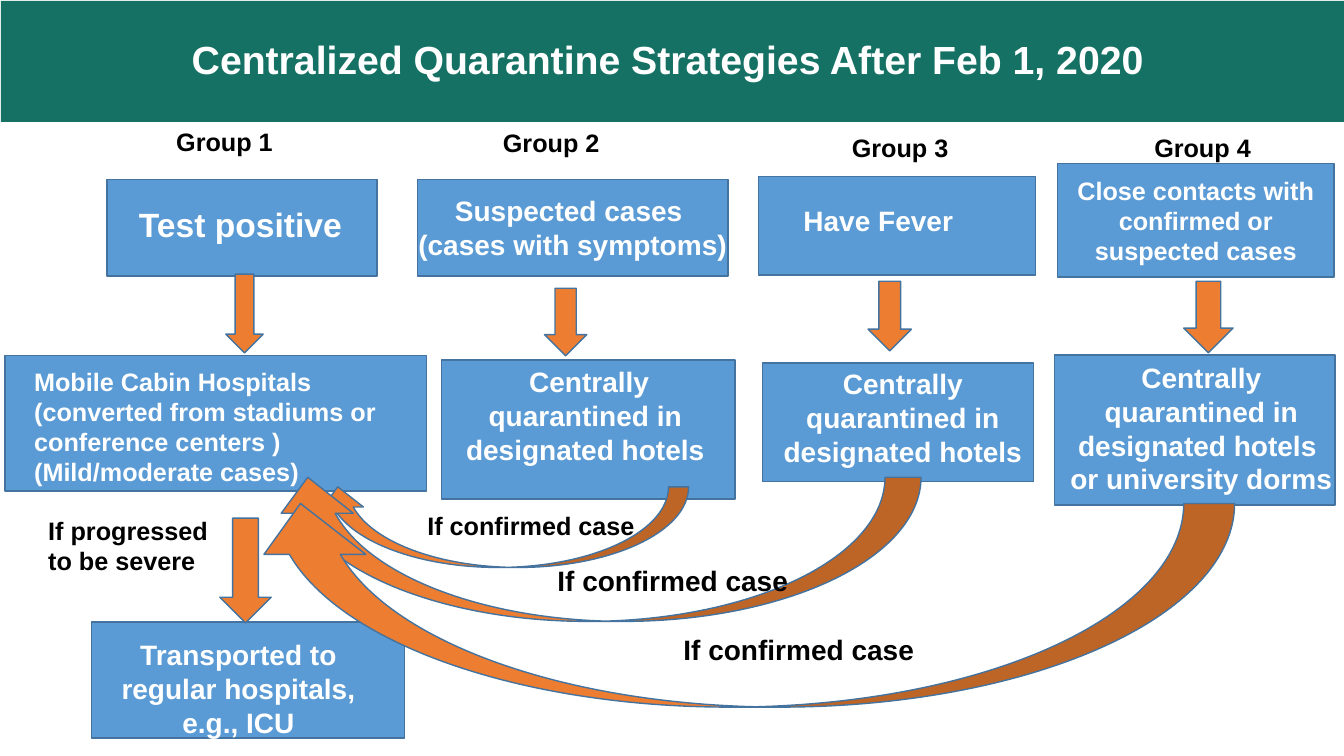
from dataclasses import dataclass

import pptx
import pptx.dml.color
import pptx.enum.shapes
import pptx.enum.text
import pptx.util

Inches = pptx.util.Inches
Shape = pptx.enum.shapes.MSO_SHAPE
Align = pptx.enum.text.PP_ALIGN
Anchor = pptx.enum.text.MSO_ANCHOR

COLOURS = {
    "banner": "157163",
    "box": "5B9BD5",
    "arrow": "ED7D31",
    "outline": "43739E",
    "white": "FFFFFF",
    "black": "000000",
}


@dataclass
class Block:
    left: float
    top: float
    width: float
    height: float
    kind: Shape = Shape.RECTANGLE
    fill: str = "box"
    rotation: float = 0
    text: str = ""


@dataclass
class Label:
    left: float
    top: float
    width: float
    height: float
    text: str
    size: int = 20
    colour: str = "white"
    align: Align = Align.CENTER


BOXES = [
    Block(1.06, 1.78, 2.68, 0.96),
    Block(4.14, 1.78, 3.08, 0.96),
    Block(7.52, 1.75, 2.75, 0.98),
    Block(10.49, 1.62, 2.74, 1.13,
          text="Close contacts with confirmed or suspected cases"),
    Block(0.05, 3.53, 4.18, 1.34),
    Block(4.38, 3.57, 2.91, 1.38),
    Block(7.56, 3.6, 2.69, 1.18),
    Block(10.46, 3.52, 2.78, 1.49),
    Block(0.91, 6.17, 3.1, 1.15),
]

DOWN_ARROWS = [
    Block(*frame, Shape.DOWN_ARROW, "arrow")
    for frame in [
        (2.24, 2.72, 0.37, 0.78),
        (5.4, 2.86, 0.42, 0.67),
        (8.61, 2.79, 0.43, 0.69),
        (11.74, 2.79, 0.49, 0.71),
        (2.18, 5.14, 0.51, 1.04),
    ]
]

RETURN_ARROWS = [
    Block(*frame, Shape.CURVED_LEFT_ARROW, "arrow", 90)
    for frame in [
        (4.59, 3.39, 0.8, 3.68),
        (5.2, 2.23, 1.43, 6.44),
        (6.35, 1.12, 2.02, 9.77),
    ]
]

GROUP_LABELS = [
    Label(left, top, width, 0.4, f"Group {number}", 18, "black", Align.LEFT)
    for number, (left, top, width) in enumerate(
        [(1.65, 1.2, 1.44), (4.89, 1.21, 1.66), (8.35, 1.26, 1.38), (11.35, 1.26, 1.27)],
        start=1,
    )
]

BOX_LABELS = [
    Label(1.28, 1.97, 2.34, 0.5, "Test positive", 24, align=Align.LEFT),
    Label(4.03, 1.87, 3.3, 0.77, "Suspected cases \n(cases with symptoms)"),
    Label(7.87, 1.97, 2.53, 0.44, "Have Fever", align=Align.LEFT),
    Label(0.24, 3.58, 3.79, 1.31,
          "Mobile Cabin Hospitals\n"
          "(converted from stadiums or conference centers )\n"
          "(Mild/moderate cases)", 18, align=Align.LEFT),
    Label(4.43, 3.57, 2.75, 1.11, " Centrally quarantined in designated hotels"),
    Label(7.62, 3.59, 2.67, 1.11, "Centrally quarantined in designated hotels"),
    Label(10.43, 3.53, 2.97, 1.45,
          "Centrally quarantined in designated hotels \nor university dorms"),
    Label(0.81, 6.28, 3.11, 1.11, "Transported to regular hospitals, e.g., ICU"),
]

CONDITION_LABELS = [
    Label(0.38, 5.06, 1.89, 0.71, "If progressed to be severe", 18, "black", Align.LEFT)
] + [
    Label(left, top, width, height, "If confirmed case", size, "black", Align.LEFT)
    for left, top, width, height, size in [
        (4.14, 5.01, 2.41, 0.4, 18),
        (5.43, 5.54, 2.59, 0.44, 20),
        (6.68, 6.23, 2.67, 0.44, 20),
    ]
]


def colour_of(name: str) -> pptx.dml.color.RGBColor:
    return pptx.dml.color.RGBColor.from_string(COLOURS[name])


def write_text(frame, text: str, size: int, colour: str, align: Align) -> None:
    frame.word_wrap = True
    frame.text = text
    for paragraph in frame.paragraphs:
        paragraph.alignment = align
        paragraph.font.name = "Arial"
        paragraph.font.size = pptx.util.Pt(size)
        paragraph.font.bold = True
        paragraph.font.color.rgb = colour_of(colour)


def add_block(slide: pptx.slide.Slide, block: Block) -> None:
    shape = slide.shapes.add_shape(
        block.kind, Inches(block.left), Inches(block.top),
        Inches(block.width), Inches(block.height))
    shape.shadow.inherit = False
    shape.rotation = block.rotation
    shape.fill.solid()
    shape.fill.fore_color.rgb = colour_of(block.fill)
    shape.line.color.rgb = colour_of("outline")
    shape.line.width = pptx.util.Pt(1)
    if block.text:
        shape.text_frame.vertical_anchor = Anchor.MIDDLE
        write_text(shape.text_frame, block.text, 18, "white", Align.CENTER)


def add_label(slide: pptx.slide.Slide, label: Label) -> None:
    shape = slide.shapes.add_textbox(
        Inches(label.left), Inches(label.top), Inches(label.width), Inches(label.height))
    write_text(shape.text_frame, label.text, label.size, label.colour, label.align)
    shape.text_frame.auto_size = pptx.enum.text.MSO_AUTO_SIZE.SHAPE_TO_FIT_TEXT


def format_title(slide: pptx.slide.Slide) -> None:
    title = slide.shapes.title
    title.left, title.top = Inches(0.01), Inches(0.01)
    title.width, title.height = Inches(13.33), Inches(1.2)
    title.fill.solid()
    title.fill.fore_color.rgb = colour_of("banner")
    title.text_frame.vertical_anchor = Anchor.MIDDLE
    write_text(title.text_frame, "Centralized Quarantine Strategies After Feb 1, 2020 ",
               28, "white", Align.CENTER)
    title.text_frame.paragraphs[0].line_spacing = 0.9


def main() -> None:
    presentation = pptx.Presentation()
    presentation.slide_width = Inches(13.33)
    presentation.slide_height = Inches(7.5)
    slide = presentation.slides.add_slide(presentation.slide_layouts[5])
    format_title(slide)
    for block in BOXES + DOWN_ARROWS:
        add_block(slide, block)
    for label in GROUP_LABELS + BOX_LABELS:
        add_label(slide, label)
    for block in RETURN_ARROWS:
        add_block(slide, block)
    for label in CONDITION_LABELS:
        add_label(slide, label)
    presentation.save("out.pptx")


if __name__ == "__main__":
    main()
